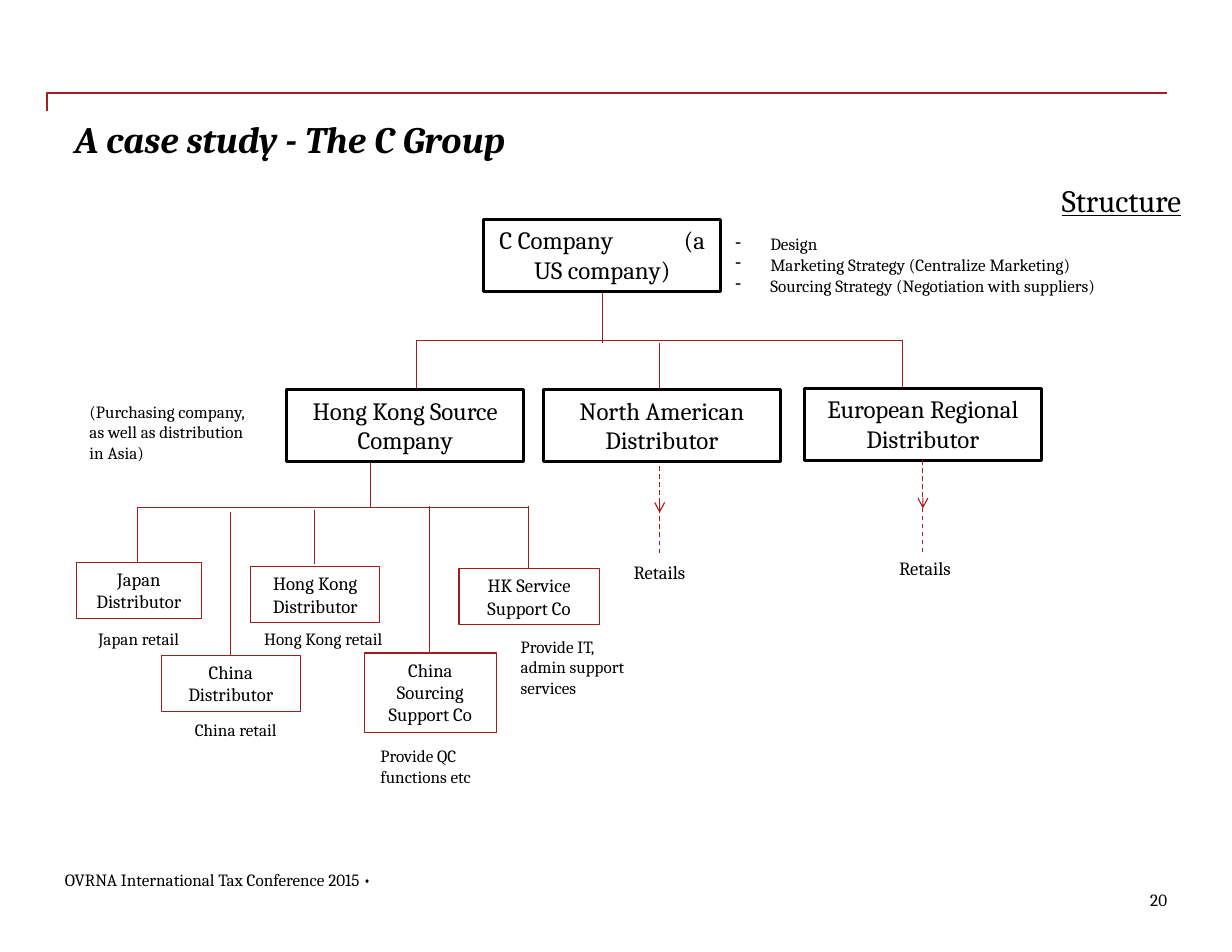
from pptx import Presentation
from pptx.dml.color import RGBColor
from pptx.enum.dml import MSO_LINE as Dash
from pptx.enum.shapes import MSO_CONNECTOR as Conn, MSO_SHAPE as Shape
from pptx.enum.text import MSO_ANCHOR as Anchor, PP_ALIGN as Align
from pptx.oxml.ns import qn
from pptx.util import Cm, Pt
from lxml.etree import SubElement as Sub

BLACK = RGBColor(0x00, 0x00, 0x00)
WHITE = RGBColor(0xFF, 0xFF, 0xFF)
RED = RGBColor(0xA3, 0x1C, 0x1C)
RULE = RGBColor(0xA3, 0x20, 0x20)
FONT = "Cambria"

MAIN_W, MAIN_H = 5.38, 1.63
MAIN = [
    (6.5, 8.84, "Hong Kong Source Company"),
    (12.32, 8.84, "North American Distributor"),
    (18.24, 8.81, "European Regional Distributor"),
]
UNITS = [
    (1.73, 12.75, 2.84, 1.27, "Japan Distributor"),
    (3.66, 14.86, 3.15, 1.27, "China Distributor"),
    (5.69, 12.85, 2.92, 1.27, "Hong Kong Distributor"),
    (8.26, 14.81, 3, 1.8, "China Sourcing Support Co"),
    (10.41, 12.9, 3.18, 1.27, "HK Service Support Co"),
]
NOTES = [
    (1.78, 8.97, 4.47, 1.68,
     ["(Purchasing company,", "as well as distribution", "in Asia)"]),
    (1.98, 14.12, 2.57, 0.74, ["Japan retail"]),
    (5.74, 14.12, 3.48, 0.74, ["Hong Kong retail"]),
    (4.17, 16.18, 2.54, 0.74, ["China retail"]),
    (8.38, 16.79, 2.74, 1.19, ["Provide QC", "functions etc"]),
    (11.56, 14.3, 3.07, 1.68, ["Provide IT,", "admin support", "services"]),
]
ROLES = [
    "Design",
    "Marketing Strategy (Centralize Marketing)",
    "Sourcing Strategy (Negotiation with suppliers)",
]
BARS = [(9.45, 20.47, 7.72), (3.1, 11.99, 11.51)]
DROPS = [
    (13.67, 6.6, 7.77), (9.45, 7.72, 8.79), (14.96, 7.77, 8.84),
    (20.47, 7.72, 8.79), (8.41, 10.46, 11.51), (3.12, 11.51, 12.75),
    (5.23, 11.61, 14.86), (7.14, 11.56, 12.8), (9.75, 11.48, 14.81),
    (11.99, 11.48, 12.88),
]
RETAIL = [
    (14.96, 10.57, 11.63, 11.53, 14.12, 12.6),
    (20.93, 10.44, 11.53, 11.51, 20.14, 12.5),
]


def add_run(para, text, size, bold=False, under=False):
    """Add one run of text to a paragraph and return it."""
    run = para.add_run()
    run.text = text
    font = run.font
    font.name, font.size, font.color.rgb = FONT, Pt(size), BLACK
    if bold:
        font.bold = font.italic = True
    if under:
        font.underline = True
    return run


def fill_text(frame, lines, size, align=Align.LEFT, **style):
    """Write one paragraph per line into a text frame."""
    frame.word_wrap = True
    frame.vertical_anchor = Anchor.TOP
    for num, text in enumerate(lines):
        para = frame.add_paragraph() if num else frame.paragraphs[0]
        para.alignment = align
        add_run(para, text, size, **style)


def add_text(slide, area, lines, size, inset=True, **style):
    """Add a text box and return its frame."""
    frame = slide.shapes.add_textbox(*map(Cm, area)).text_frame
    if not inset:
        frame.margin_left = frame.margin_right = 0
        frame.margin_top = frame.margin_bottom = 0
    fill_text(frame, lines, size, **style)
    return frame


def add_box(slide, area, lines, size, color, width, fill=None):
    """Add an outlined company box and return its frame."""
    box = slide.shapes.add_shape(Shape.RECTANGLE, *map(Cm, area))
    box.shadow.inherit = False
    if fill is None:
        box.fill.background()
    else:
        box.fill.solid()
        box.fill.fore_color.rgb = fill
    box.line.color.rgb, box.line.width = color, Pt(width)
    fill_text(box.text_frame, lines, size, Align.CENTER)
    return box.text_frame


def add_line(slide, ends, color=RED, width=0.75, kind=Conn.STRAIGHT,
             dash=False, arrow=False):
    """Add a connector between two points."""
    line = slide.shapes.add_connector(kind, *map(Cm, ends))
    line.line.color.rgb, line.line.width = color, Pt(width)
    if dash:
        line.line.dash_style = Dash.DASH
    if arrow:
        Sub(line.line._get_or_add_ln(), qn("a:tailEnd"), type="arrow")
    Sub(line._element.spPr, qn("a:effectLst"))
    return line


def add_rule(slide):
    """Add the bent rule above the title."""
    rule = add_line(slide, (1.07, 2.51, 26.47, 2.11), RULE, 1, Conn.ELBOW)
    geom = rule._element.spPr.find(qn("a:prstGeom"))
    Sub(geom.find(qn("a:avLst")), qn("a:gd"), name="adj1", fmla="val 0")


def add_head(slide):
    """Add the parent company, with a widened space in its name."""
    frame = add_box(slide, (10.97, 4.98, MAIN_W, MAIN_H),
                    ["C Company"], 16, BLACK, 2, WHITE)
    para = frame.paragraphs[0]
    gap = add_run(para, " ", 16)
    gap.font._element.set("spc", "4200")
    add_run(para, "(a US company)", 16)


def add_roles(slide):
    """Add the dashed list of the parent company's roles."""
    frame = add_text(slide, (16.43, 5.18, 9.53, 1.68), ROLES, 11)
    for para in frame.paragraphs:
        props = para._p.get_or_add_pPr()
        props.set("marL", str(Cm(0.79)))
        props.set("indent", str(-Cm(0.79)))
        Sub(props, qn("a:buChar"), char="-")


def add_retail(slide, x, top, tip, mid, left, low):
    """Add a dashed arrow that leads to a retail label."""
    add_line(slide, (x, top, x, tip), dash=True, arrow=True)
    add_line(slide, (x, mid, x, 12.6), dash=True)
    add_text(slide, (left, low, 1.8, 0.76), ["Retails"], 12)


def main():
    """Build the group structure slide."""
    deck = Presentation()
    deck.slide_width, deck.slide_height = Cm(27.94), Cm(21.59)
    slide = deck.slides.add_slide(deck.slide_layouts[6])
    add_rule(slide)
    add_text(slide, (1.7, 2.64, 22.58, 2.54), ["A case study - The C Group"],
             24, inset=False, bold=True)
    add_text(slide, (26.01, 20.17, 0.46, 0.48), ["20"], 11, inset=False,
             align=Align.RIGHT)
    add_text(slide, (1.47, 19.71, 7.85, 0.48),
             ["OVRNA International Tax Conference 2015 •"], 11, inset=False)
    add_text(slide, (23.83, 3.99, 3.48, 1.12), ["Structure"], 20, under=True)
    for left, right, y in BARS:
        add_line(slide, (left, y, right, y))
    for x, top, low in DROPS:
        add_line(slide, (x, top, x, low))
    add_head(slide)
    add_roles(slide)
    for x, y, name in MAIN:
        add_box(slide, (x, y, MAIN_W, MAIN_H), [name], 16, BLACK, 2, WHITE)
    for *area, name in UNITS:
        add_box(slide, area, [name], 12, RED, 0.75)
    for *area, lines in NOTES:
        add_text(slide, area, lines, 11)
    for spot in RETAIL:
        add_retail(slide, *spot)
    deck.save("out.pptx")


if __name__ == "__main__":
    main()
